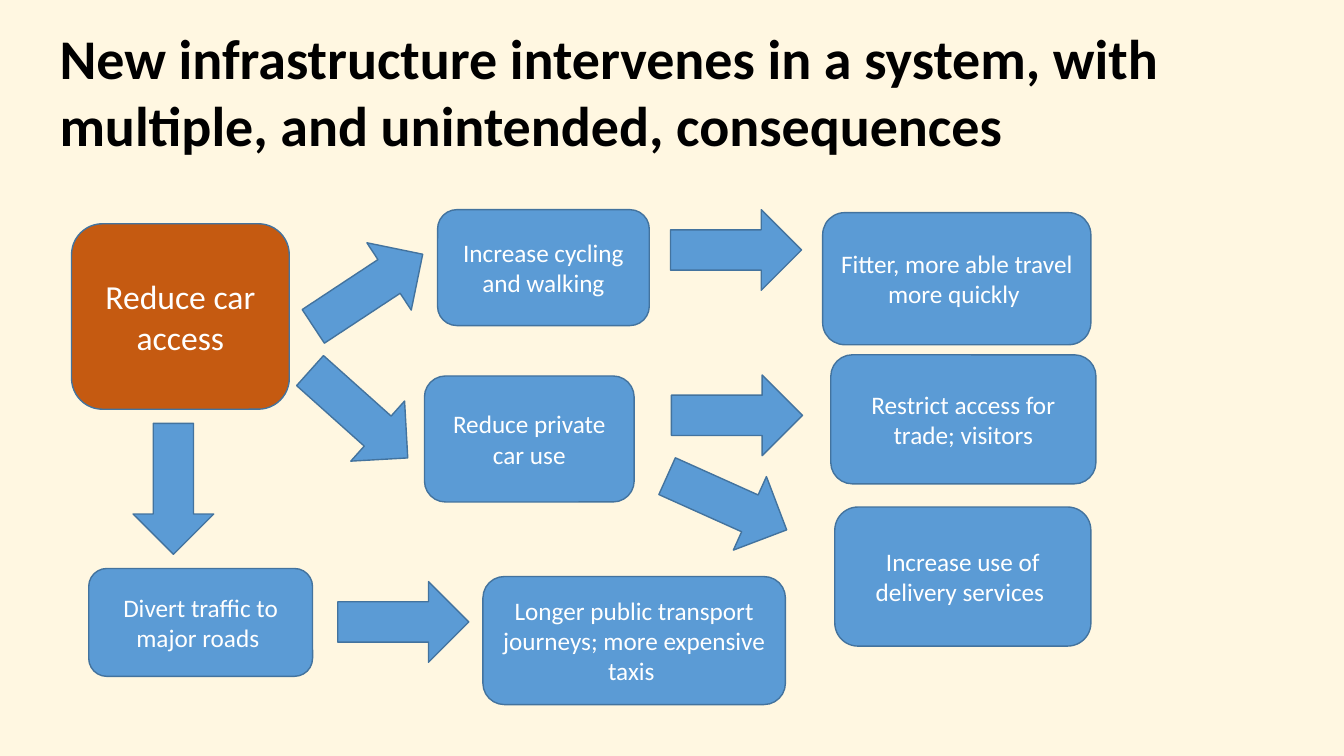
"""Build a slide on the knock-on effects of reducing car access."""
from pptx import Presentation, util as u
from pptx.dml.color import RGBColor
from pptx.enum import shapes, text

CREAM = RGBColor(0xFF, 0xF7, 0xE1)
BLUE = RGBColor(0x5B, 0x9B, 0xD5)
NAVY = RGBColor(0x43, 0x73, 0x9E)
RUST = RGBColor(0xC5, 0x5A, 0x11)
WHITE = RGBColor(0xFF, 0xFF, 0xFF)
BLACK = RGBColor(0, 0, 0)
CELL = u.Inches(0.1)
WIDE, TALL = 8, 13


def draw(kind, col, row, wide, high, fill=BLUE):
    """Add a filled, outlined shape placed in grid cells."""
    box = [round(n * CELL) for n in (col, row, wide, high)]
    shape = slide.shapes.add_shape(kind, *box)
    shape.shadow.inherit = False
    shape.fill.solid()
    shape.fill.fore_color.rgb = fill
    shape.line.color.rgb = NAVY
    shape.line.width = u.Pt(1)
    return shape


def style(par, size, color, bold=False):
    """Set the font of every run in a paragraph."""
    for run in par.runs:
        run.font.name = "Calibri"
        run.font.size = u.Pt(size)
        run.font.bold = bold
        run.font.color.rgb = color


deck = Presentation()
deck.slide_width, deck.slide_height = u.Inches(13.33), u.Inches(7.5)
slide = deck.slides.add_slide(deck.slide_layouts[5])
slide.background.fill.solid()
slide.background.fill.fore_color.rgb = CREAM

title = slide.shapes.title
title.left, title.top, title.width, title.height = [
    round(n * CELL) for n in (4.9, 1.8, 121.5, 14.5)]
frame = title.text_frame
frame.text = "New infrastructure intervenes in a system, with multiple, and unintended, consequences"
frame.word_wrap = True
frame.auto_size = text.MSO_AUTO_SIZE.NONE
frame.vertical_anchor = text.MSO_ANCHOR.TOP
head = frame.paragraphs[0]
head.alignment = text.PP_ALIGN.LEFT
style(head, 40, BLACK, True)

ARROWS = [
    (36.5, 28.8, 236.6),
    (73, 24.8, 270),
    (72.1, 49.9, 294.2),
    (35.6, 41.1, 311.8),
    (73.1, 41.2, 270),
    (17.2, 48.5, 0),
    (40, 61.7, 270),
]
for mid, level, turn in ARROWS:
    arrow = draw(shapes.MSO_SHAPE.DOWN_ARROW, mid - WIDE / 2, level - TALL / 2, WIDE, TALL)
    arrow.rotation = turn

BOXES = [
    ("Reduce car access", 7.1, 22.2, 21.6, 18.4, RUST, 24),
    ("Increase cycling and walking", 43.4, 20.8, 21, 11.5, BLUE, 18),
    ("Reduce private car use", 42.1, 37.3, 20.8, 12.5, BLUE, 18),
    ("Divert traffic to major roads ", 8.8, 56.4, 22.2, 10.7, BLUE, 18),
    ("Fitter, more able travel more quickly ", 81.6, 21.1, 26.6, 13.1, BLUE, 18),
    ("Restrict access for trade; visitors", 82.4, 35.2, 26.3, 12.8, BLUE, 18),
    ("Increase use of delivery services ", 82.8, 50.3, 25.4, 13.8, BLUE, 18),
    ("Longer public transport journeys; more expensive taxis ", 47.9, 57.2, 30, 12.7, BLUE, 18),
]
for words, col, row, wide, high, fill, size in BOXES:
    box = draw(shapes.MSO_SHAPE.ROUNDED_RECTANGLE, col, row, wide, high, fill)
    frame = box.text_frame
    frame.text = words
    frame.word_wrap = True
    frame.vertical_anchor = text.MSO_ANCHOR.MIDDLE
    label = frame.paragraphs[0]
    label.alignment = text.PP_ALIGN.CENTER
    style(label, size, WHITE)

deck.save("out.pptx")
